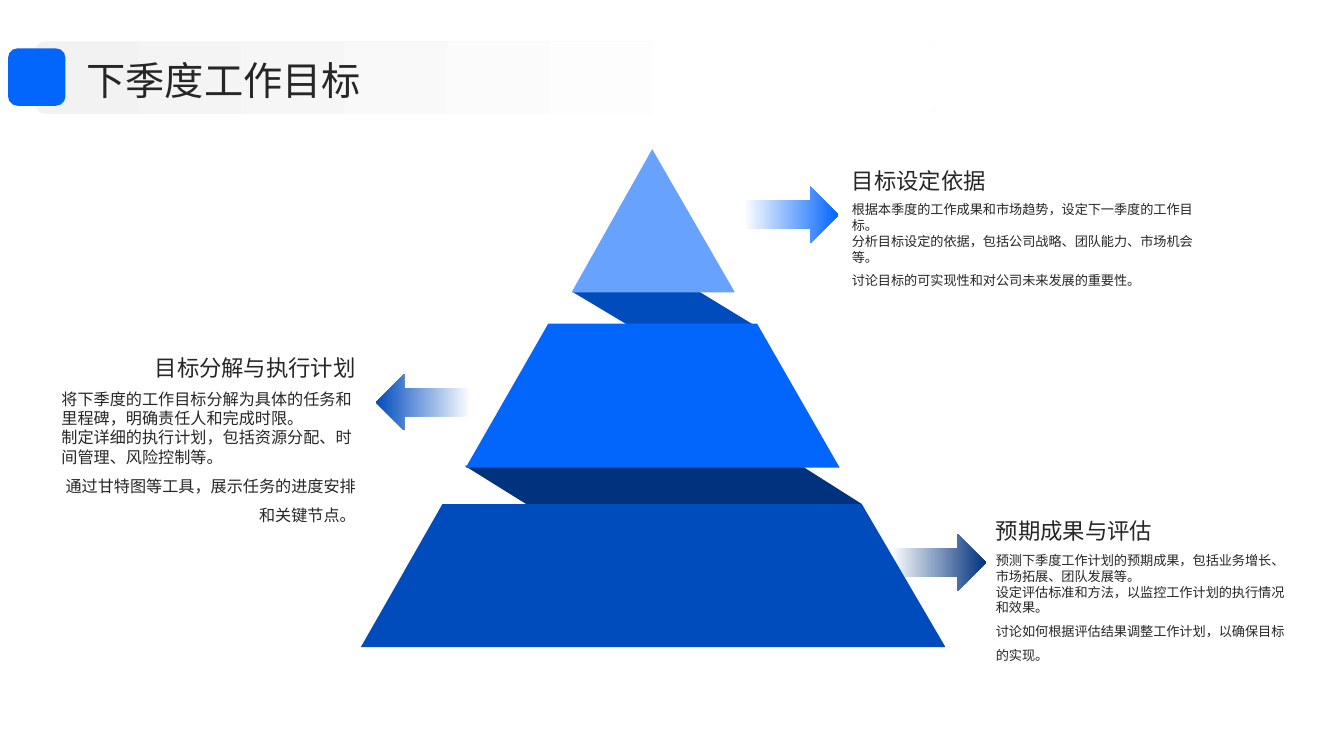
import pptx
import pptx.util
import pptx.dml.color
import pptx.enum.shapes
import pptx.enum.text
import pptx.oxml.ns
import lxml.etree

RGB = pptx.dml.color.RGBColor
SHAPE = pptx.enum.shapes.MSO_SHAPE
ALIGN = pptx.enum.text.PP_ALIGN
ANCHOR = pptx.enum.text.MSO_ANCHOR

INK = RGB(0x26, 0x26, 0x26)
WHITE = RGB(0xFF, 0xFF, 0xFF)
GREY = RGB(0xF2, 0xF2, 0xF2)
LIGHT = RGB(0x67, 0xA2, 0xFE)
BLUE = RGB(0x02, 0x65, 0xFC)
DEEP = RGB(0x01, 0x4C, 0xBD)
NAVY = RGB(0x01, 0x32, 0x7E)


class Deck:
    """Draws styled elements on one slide, on a grid of tenths of an inch."""

    font = "Noto Sans CJK SC"
    cols, rows = 133.33, 75

    def __init__(self):
        self.file = pptx.Presentation()
        self.file.slide_width = self.cell(self.cols)
        self.file.slide_height = self.cell(self.rows)
        self.slide = self.file.slides.add_slide(self.file.slide_layouts[5])
        self.shapes = self.slide.shapes

    def cell(self, count):
        return pptx.util.Inches(count / 10)

    def box(self, *sides):
        return [self.cell(side) for side in sides]

    def paint(self, shape, color):
        shape.shadow.inherit = False
        shape.line.fill.background()
        shape.fill.solid()
        shape.fill.fore_color.rgb = color
        return shape

    def fade(self, shape, start, end, stop=1.0):
        shape.fill.gradient()
        shape.fill.gradient_angle = 0
        for mark, color, place in zip(shape.fill.gradient_stops, (start, end), (0, stop)):
            mark.color.rgb = color
            mark.position = place

    def block(self, kind, area, color, round=None):
        shape = self.shapes.add_shape(kind, *self.box(*area))
        if round is not None:
            shape.adjustments[0] = round
        return self.paint(shape, color)

    def arrow(self, left, top, color, flip=False):
        shape = self.block(SHAPE.RIGHT_ARROW, (left, top, 9.4, 5.6), color)
        self.fade(shape, WHITE, color)
        if flip:
            shape._element.spPr.xfrm.set("flipH", "1")

    def slab(self, color, *points):
        first, *rest = [self.box(*point) for point in points]
        pen = self.shapes.build_freeform(*first)
        pen.add_line_segments(rest, close=True)
        self.paint(pen.convert_to_shape(), color)

    def frame(self, shape, anchor):
        frame = shape.text_frame
        frame.word_wrap = True
        frame.auto_size = pptx.enum.text.MSO_AUTO_SIZE.NONE
        frame.vertical_anchor = anchor
        frame.margin_left = frame.margin_right = 0
        frame.margin_top = frame.margin_bottom = 0
        return frame

    def style(self, part, size, gap, align=ALIGN.LEFT):
        part.alignment = align
        part.line_spacing = gap
        for run in part.runs:
            run.font.size = pptx.util.Pt(size)
            run.font.name = self.font
            run.font.color.rgb = INK
            east = lxml.etree.Element(pptx.oxml.ns.qn("a:ea"), typeface=self.font)
            run.font._element.find(pptx.oxml.ns.qn("a:latin")).addnext(east)

    def text(self, area, lines, size, gap, align=ALIGN.LEFT, anchor=ANCHOR.TOP):
        frame = self.frame(self.shapes.add_textbox(*self.box(*area)), anchor)
        frame.text = "\n".join(lines)
        *upper, last = frame.paragraphs
        for part in upper:
            self.style(part, size, 1.0)
        self.style(last, size, gap, align)

    def note(self, left, top, width, height, head, lines, size=9.4, align=ALIGN.LEFT):
        self.text((left, top, width, 3), [head], 16, 1.3, align, ANCHOR.BOTTOM)
        self.text((left, top + 3.8, width, height), lines, size, 1.5, align)

    def title(self, area, words):
        shape = self.shapes.title
        self.shapes._spTree.append(shape._element)
        shape.left, shape.top, shape.width, shape.height = self.box(*area)
        frame = self.frame(shape, ANCHOR.MIDDLE)
        frame.text = words
        self.style(frame.paragraphs[0], 28, 1.1)


def main():
    deck = Deck()
    deck.arrow(88.4, 53, NAVY)
    deck.note(98.8, 51, 28.6, 12.4, "预期成果与评估", [
        "预测下季度工作计划的预期成果，包括业务增长、市场拓展、团队发展等。",
        "设定评估标准和方法，以监控工作计划的执行情况和效果。",
        "讨论如何根据评估结果调整工作计划，以确保目标的实现。"])

    deck.slab(NAVY, (85.5, 50), (52.2, 50), (46.1, 46.2), (79.5, 46.2))
    deck.slab(DEEP, (75.2, 32.5), (62.7, 32.5), (56.7, 28.9), (69.3, 28.9))
    deck.slab(DEEP, (43.9, 50), (85.5, 50), (93.8, 64.2), (35.8, 64.2))
    deck.slab(BLUE, (54.4, 32.1), (75.1, 32.1), (83.3, 46.4), (46.2, 46.4))
    deck.slab(LIGHT, (64.7, 14.8), (72.9, 29), (56.7, 29))

    deck.arrow(73.8, 18.5, BLUE)
    deck.arrow(37.3, 37.1, DEEP, flip=True)
    deck.note(84.5, 16.2, 33.9, 12.4, "目标设定依据", [
        "根据本季度的工作成果和市场趋势，设定下一季度的工作目标。",
        "分析目标设定的依据，包括公司战略、团队能力、市场机会等。",
        "讨论目标的可实现性和对公司未来发展的重要性。"])
    deck.note(6.1, 34.8, 29.2, 14.5, "目标分解与执行计划", [
        "将下季度的工作目标分解为具体的任务和里程碑，明确责任人和完成时限。",
        "制定详细的执行计划，包括资源分配、时间管理、风险控制等。",
        "通过甘特图等工具，展示任务的进度安排和关键节点。"], 11.5, ALIGN.RIGHT)

    bar = deck.block(SHAPE.ROUNDED_RECTANGLE, (3.5, 4.1, 89.4, 7.2), GREY, 0.14)
    deck.fade(bar, GREY, WHITE, 0.8)
    deck.title((8.6, 5.1, 116.7, 5.1), "下季度工作目标")
    deck.block(SHAPE.ROUNDED_RECTANGLE, (0.8, 4.8, 5.7, 5.7), BLUE)
    deck.file.save("out.pptx")


if __name__ == "__main__":
    main()
